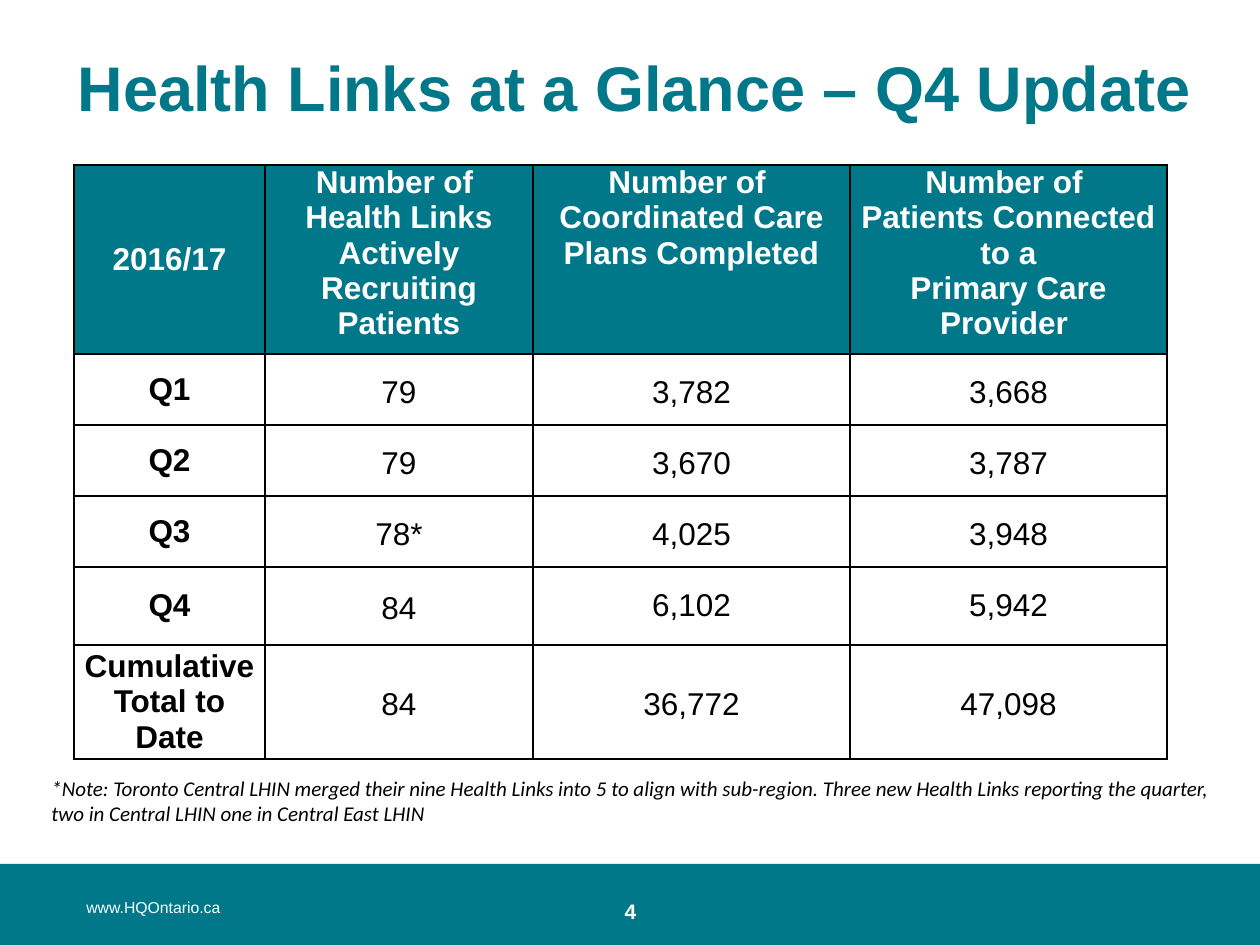
from lxml.etree import SubElement
from pptx import Presentation
from pptx.dml.color import RGBColor
from pptx.enum.shapes import MSO_SHAPE as Shape
from pptx.enum.text import MSO_ANCHOR as Anchor, PP_ALIGN as Align
from pptx.oxml.ns import qn
from pptx.util import Emu, Pt

PX_PER_INCH = 126
COLORS = {"teal": "00788A", "white": "FFFFFF", "black": "000000"}

COLUMN_WIDTHS = [191, 268, 317, 317]
ROW_HEIGHTS = [189, 71, 71, 71, 78, 114]
ROWS = [
    ["2016/17",
     "Number of \nHealth Links Actively Recruiting Patients",
     "Number of \nCoordinated Care Plans Completed",
     "Number of \nPatients Connected to a\nPrimary Care Provider "],
    ["Q1", "79", "3,782", "3,668"],
    ["Q2", "79", "3,670", "3,787"],
    ["Q3", "78*", "4,025", "3,948"],
    ["Q4", "84", "6,102", "5,942"],
    ["Cumulative Total to Date", "84", "36,772", "47,098"],
]
SINGLE_SPACED = {"6,102", "5,942"}
NOTE = ("*Note: Toronto Central LHIN merged their nine Health Links into 5 to align "
        "with sub-region. Three new Health Links reporting the quarter, two in "
        "Central LHIN one in Central East LHIN")


def px(length):
    return Emu(round(length * 914400 / PX_PER_INCH))


def rgb(name):
    return RGBColor.from_string(COLORS[name])


def write(text_frame, text, size, color, bold=False, italic=False,
          align=Align.LEFT, font="Arial", spacing=None):
    text_frame.text = text
    for paragraph in text_frame.paragraphs:
        paragraph.alignment = align
        paragraph.line_spacing = spacing
        for run in paragraph.runs:
            run.font.name = font
            run.font.size = Pt(size)
            run.font.bold = bold
            run.font.italic = italic
            run.font.color.rgb = rgb(color)


def add_text(slide, box, text, size, color, anchor=Anchor.TOP, **style):
    text_frame = slide.shapes.add_textbox(*map(px, box)).text_frame
    text_frame.word_wrap = True
    text_frame.vertical_anchor = anchor
    write(text_frame, text, size, color, **style)


def add_borders(cell):
    properties = cell._tc.get_or_add_tcPr()
    for side in ("a:lnL", "a:lnR", "a:lnT", "a:lnB"):
        line = SubElement(properties, qn(side), w=str(Pt(1)))
        fill = SubElement(line, qn("a:solidFill"))
        SubElement(fill, qn("a:srgbClr"), val=COLORS["black"])


def style_cell(cell, text, is_header, is_label):
    cell.margin_left = cell.margin_right = px(9)
    cell.margin_top = cell.margin_bottom = 0
    cell.vertical_anchor = Anchor.TOP if is_header and not is_label else Anchor.MIDDLE
    add_borders(cell)
    if is_header:
        cell.fill.solid()
        cell.fill.fore_color.rgb = rgb("teal")
    else:
        cell.fill.background()
    emphasized = is_header or is_label
    spacing = None if emphasized or text in SINGLE_SPACED else 1.15
    write(cell.text_frame, text, 18, "white" if is_header else "black",
          bold=emphasized, align=Align.CENTER, spacing=spacing)


def add_results_table(slide, left, top):
    frame = slide.shapes.add_table(
        len(ROWS), len(COLUMN_WIDTHS), px(left), px(top),
        px(sum(COLUMN_WIDTHS)), px(sum(ROW_HEIGHTS)))
    table = frame.table
    table.horz_banding = False
    for column, width in zip(table.columns, COLUMN_WIDTHS):
        column.width = px(width)
    for row, height in zip(table.rows, ROW_HEIGHTS):
        row.height = px(height)
    for row_index, texts in enumerate(ROWS):
        for column_index, text in enumerate(texts):
            style_cell(table.cell(row_index, column_index), text,
                       row_index == 0, column_index == 0)


def add_footer(slide, left, top, width, height):
    bar = slide.shapes.add_shape(Shape.RECTANGLE, *map(px, (left, top, width, height)))
    bar.shadow.inherit = False
    bar.fill.solid()
    bar.fill.fore_color.rgb = rgb("teal")
    bar.line.fill.background()
    add_text(slide, (left + 557, top + 28, 147, 38), "4", 12, "white",
             bold=True, align=Align.CENTER)
    add_text(slide, (left + 74, top + 28, 388, 34), "www.HQOntario.ca", 9, "white")


def main():
    presentation = Presentation()
    presentation.slide_width = px(1260)
    presentation.slide_height = px(945)
    slide = presentation.slides.add_slide(presentation.slide_layouts[6])
    add_footer(slide, 0, 864, 1265, 84)
    add_text(slide, (63, 38, 1143, 97), "Health Links at a Glance – Q4 Update", 36,
             "teal", Anchor.MIDDLE, bold=True, align=Align.CENTER)
    add_text(slide, (39, 769, 1191, 63), NOTE, 12, "black", italic=True, font="Calibri")
    add_results_table(slide, 74, 165)
    presentation.save("out.pptx")


if __name__ == "__main__":
    main()
